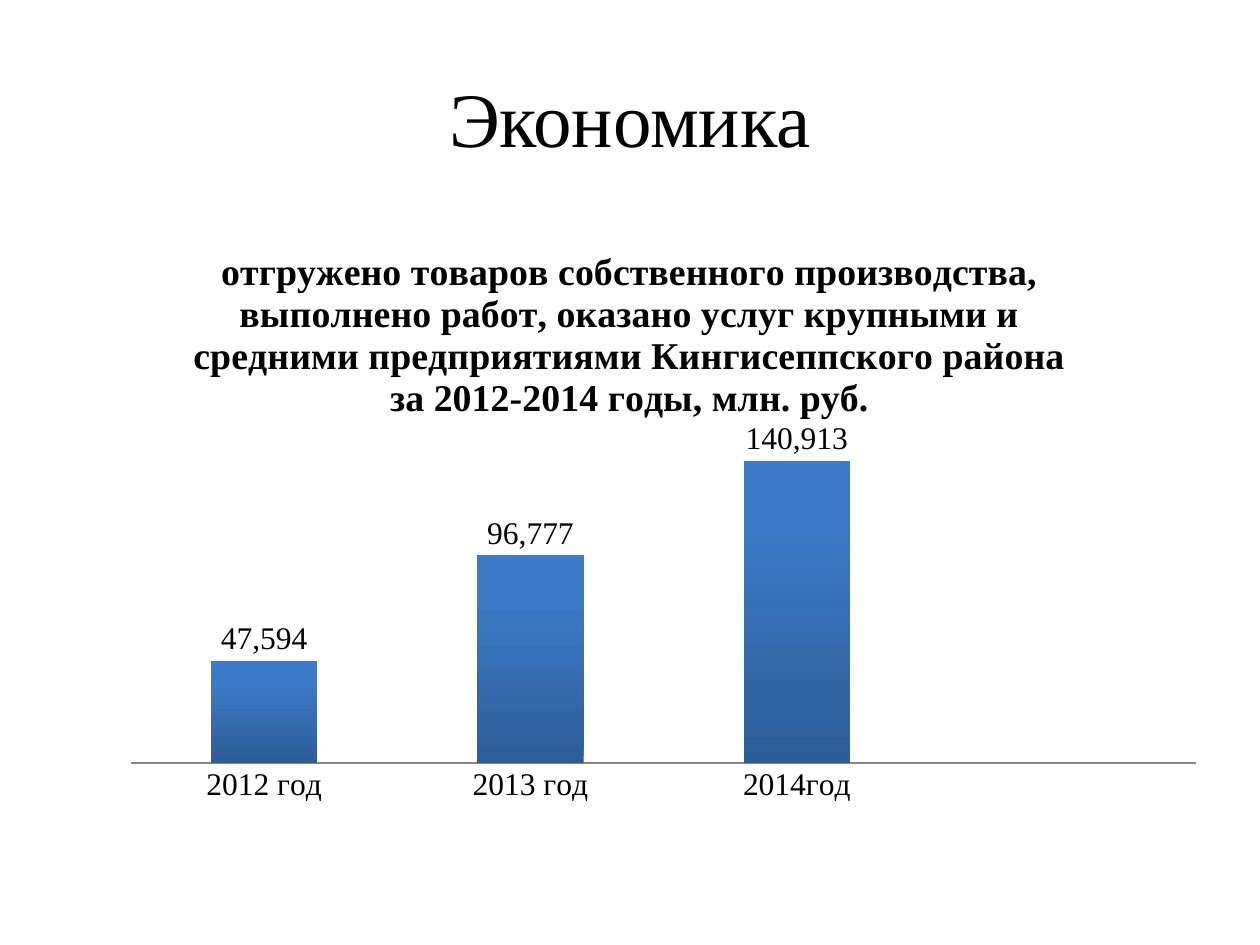
from typing import NamedTuple, Optional

from lxml.etree import SubElement
from pptx import Presentation
from pptx.chart.chart import Chart
from pptx.chart.data import CategoryChartData
from pptx.dml.color import RGBColor
from pptx.enum.chart import XL_CHART_TYPE, XL_LABEL_POSITION, XL_TICK_MARK
from pptx.enum.text import MSO_ANCHOR, PP_ALIGN
from pptx.oxml.ns import qn
from pptx.util import Pt

FONT = "Times New Roman"
BLACK = RGBColor(0x00, 0x00, 0x00)
AXIS_GRAY = RGBColor(0x86, 0x86, 0x86)
BAR_BOTTOM = RGBColor(0x2C, 0x5D, 0x98)
BAR_TOP = RGBColor(0x3C, 0x7B, 0xC7)
CHART_TITLE = (
    "отгружено товаров собственного производства, выполнено работ, "
    "оказано услуг крупными и средними предприятиями "
    "Кингисеппского района за 2012-2014 годы, млн. руб."
)


class Year(NamedTuple):
    label: str
    shipped: Optional[int]


YEARS = [
    Year("2012 год", 47594),
    Year("2013 год", 96777),
    Year("2014год", 140913),
    Year("", None),
]


def set_font(font, size: float, bold: bool = False) -> None:
    font.name = FONT
    font.size = Pt(size)
    font.bold = bold
    font.color.rgb = BLACK


def place_plot(chart: Chart, x: float, y: float, w: float, h: float) -> None:
    """Fix the inner plot area, in fractions of the chart."""
    plot_area = chart.element.find(".//" + qn("c:plotArea"))
    for old_layout in plot_area.findall(qn("c:layout")):
        plot_area.remove(old_layout)
    layout = SubElement(plot_area, qn("c:layout"))
    plot_area.insert(0, layout)
    manual = SubElement(layout, qn("c:manualLayout"))
    settings = [("layoutTarget", "inner"), ("xMode", "edge"), ("yMode", "edge"),
                ("x", x), ("y", y), ("w", w), ("h", h)]
    for name, value in settings:
        SubElement(manual, qn(f"c:{name}")).set("val", str(value))


def add_title(slide) -> None:
    box = slide.shapes.add_textbox(Pt(36), Pt(21.6), Pt(648), Pt(90))
    frame = box.text_frame
    frame.word_wrap = True
    frame.vertical_anchor = MSO_ANCHOR.MIDDLE
    para = frame.paragraphs[0]
    para.text = "Экономика"
    para.alignment = PP_ALIGN.CENTER
    set_font(para.font, 44)


def add_shipments_chart(slide) -> None:
    data = CategoryChartData(number_format="#,##0")
    data.categories = [year.label for year in YEARS]
    data.add_series("Series 1", [year.shipped for year in YEARS])
    chart = slide.shapes.add_chart(
        XL_CHART_TYPE.COLUMN_CLUSTERED, Pt(36), Pt(126), Pt(648), Pt(356.4), data
    ).chart
    set_font(chart.font, 18)
    chart.has_legend = False
    place_plot(chart, 0.06, 0.32, 0.94, 0.55)

    # Chart title
    chart.has_title = True
    para = chart.chart_title.text_frame.paragraphs[0]
    para.text = CHART_TITLE
    set_font(para.font, 21.6, bold=True)

    # Axes
    chart.category_axis.major_tick_mark = XL_TICK_MARK.NONE
    chart.category_axis.format.line.color.rgb = AXIS_GRAY
    chart.category_axis.format.line.width = Pt(0.75)
    value_axis = chart.value_axis
    value_axis.visible = False
    value_axis.has_major_gridlines = False
    value_axis.minimum_scale = 0
    value_axis.maximum_scale = 160000

    # Bars
    plot = chart.plots[0]
    plot.gap_width = 150
    plot.vary_by_categories = False
    fill = plot.series[0].format.fill
    fill.gradient()
    fill.gradient_angle = 90
    bottom, top = fill.gradient_stops
    bottom.color.rgb, bottom.position = BAR_BOTTOM, 0
    top.color.rgb, top.position = BAR_TOP, 0.8

    # Value labels
    plot.has_data_labels = True
    labels = plot.data_labels
    labels.show_value = True
    labels.number_format = "#,##0"
    labels.number_format_is_linked = False
    labels.position = XL_LABEL_POSITION.OUTSIDE_END
    set_font(labels.font, 18)


def main() -> None:
    deck = Presentation()
    deck.slide_width, deck.slide_height = Pt(720), Pt(540)
    page = deck.slides.add_slide(deck.slide_layouts[6])
    add_title(page)
    add_shipments_chart(page)
    deck.save("out.pptx")


if __name__ == "__main__":
    main()
